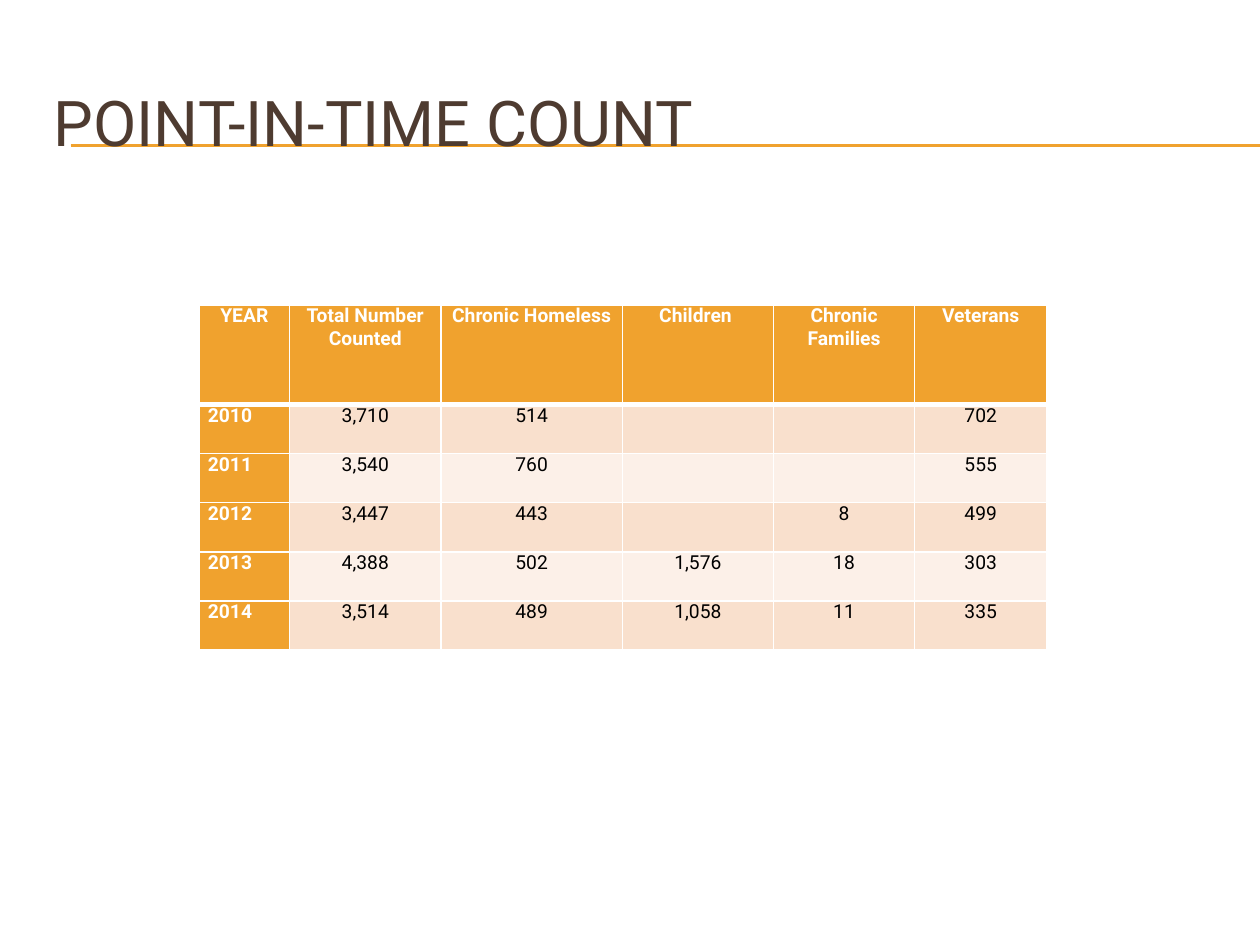
import pptx
import pptx.util
import pptx.dml.color
import pptx.enum.shapes
import pptx.enum.text
import pptx.oxml.ns
from lxml import etree

Inches, Pt = pptx.util.Inches, pptx.util.Pt
RGB = pptx.dml.color.RGBColor.from_string
qn = pptx.oxml.ns.qn
COLORS = {"accent": "F0A22E", "title": "4E3B30", "white": "FFFFFF",
          "black": "000000", "band_dark": "F9E0CD", "band_light": "FCF0E8"}


def add_run(p, text, size, color, bold=False):
    r = p.add_run()
    r.text = text
    r.font.name = "Roboto"
    r.font.size = Pt(size)
    r.font.bold = bold
    r.font.color.rgb = RGB(COLORS[color])


def add_border(cell, side, width):
    ln = etree.SubElement(cell._tc.get_or_add_tcPr(), qn("a:ln" + side), w=str(Pt(width)))
    fill = etree.SubElement(ln, qn("a:solidFill"))
    etree.SubElement(fill, qn("a:srgbClr"), val=COLORS["white"])


prs = pptx.Presentation()
prs.slide_width, prs.slide_height = Inches(10), Inches(7.5)
s = prs.slides.add_slide(prs.slide_layouts[6])

# Double rule under the title
for y in (1.15, 1.16):
    line = s.shapes.add_connector(pptx.enum.shapes.MSO_CONNECTOR.STRAIGHT,
                                  Inches(0.56), Inches(y), Inches(10), Inches(y))
    line.line.color.rgb = RGB(COLORS["accent"])
    line.line.width = Pt(0.75)
    etree.SubElement(line._element.spPr, qn("a:effectLst"))

# Title
sp = s.shapes.add_textbox(Inches(0.33), Inches(0.5), Inches(9.5), Inches(0.92))
tf = sp.text_frame
tf.word_wrap = True
tf.vertical_anchor = pptx.enum.text.MSO_ANCHOR.MIDDLE
add_run(tf.paragraphs[0], "POINT-IN-TIME COUNT", 36, "title")

# Table
rows = [
    ["YEAR", "Total Number Counted", "Chronic Homeless", "Children ", "Chronic Families", "Veterans"],
    ["2010", "3,710", "514", "", "", "702"],
    ["2011", "3,540", "760", "", "", "555"],
    ["2012", "3,447", "443", "", "8", "499"],
    ["2013", "4,388", "502", "1,576", "18", "303"],
    ["2014", "3,514", "489", "1,058", "11", "335"],
]
col_widths = [0.72, 1.2, 1.44, 1.2, 1.12, 1.05]
row_heights = [0.79] + [0.39] * 5
table = s.shapes.add_table(len(rows), len(col_widths), Inches(1.58), Inches(2.42),
                           Inches(sum(col_widths)), Inches(sum(row_heights))).table
for col, width in zip(table.columns, col_widths):
    col.width = Inches(width)
for row, height in zip(table.rows, row_heights):
    row.height = Inches(height)

for i, values in enumerate(rows):
    for j, text in enumerate(values):
        cell = table.cell(i, j)
        heading = i == 0 or j == 0
        cell.margin_left = cell.margin_right = Inches(0.07)
        cell.margin_top = cell.margin_bottom = 0

        # Thick line between the header and the body
        for side in "LRTB":
            thick = (i, side) in ((0, "B"), (1, "T"))
            add_border(cell, side, 3 if thick else 1)

        band = "band_dark" if i % 2 else "band_light"
        cell.fill.solid()
        cell.fill.fore_color.rgb = RGB(COLORS["accent" if heading else band])

        if text:
            p = cell.text_frame.paragraphs[0]
            if i == 0 or j > 0:
                p.alignment = pptx.enum.text.PP_ALIGN.CENTER
            add_run(p, text, 11, "white" if heading else "black", heading)

prs.save("out.pptx")
